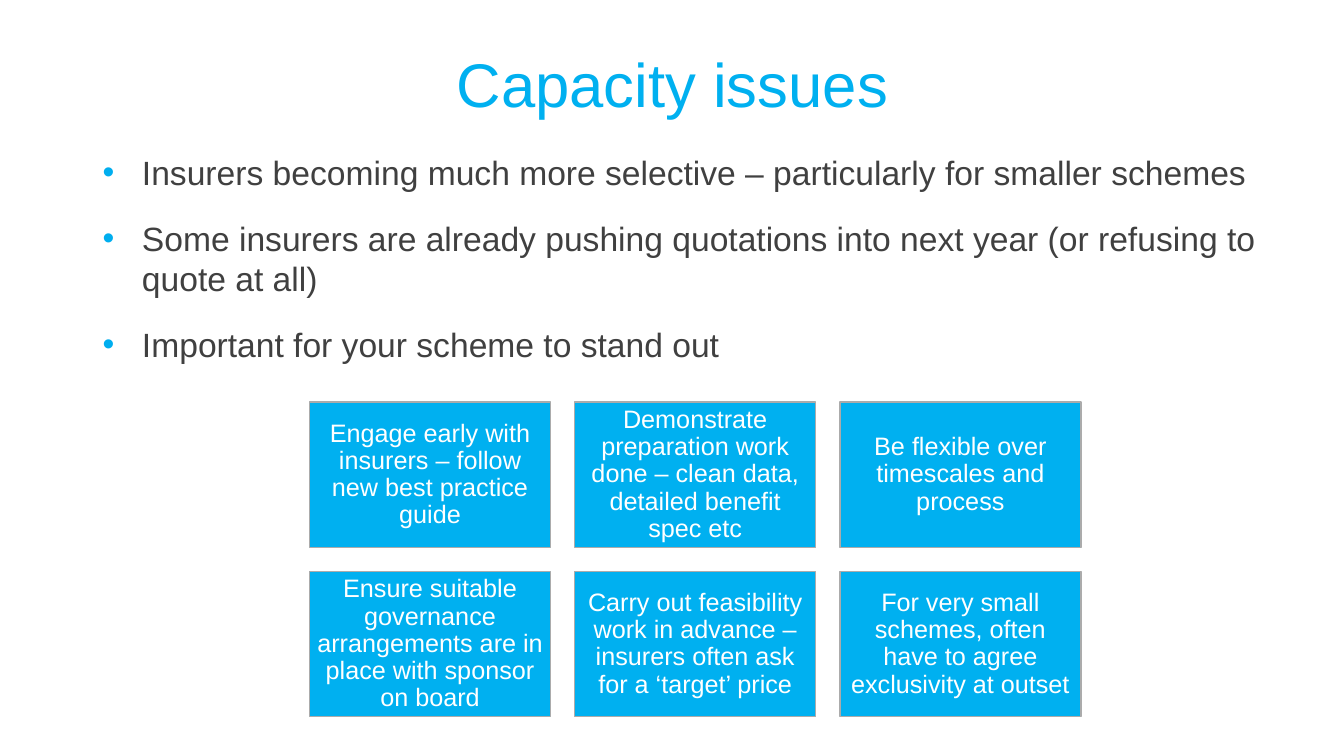
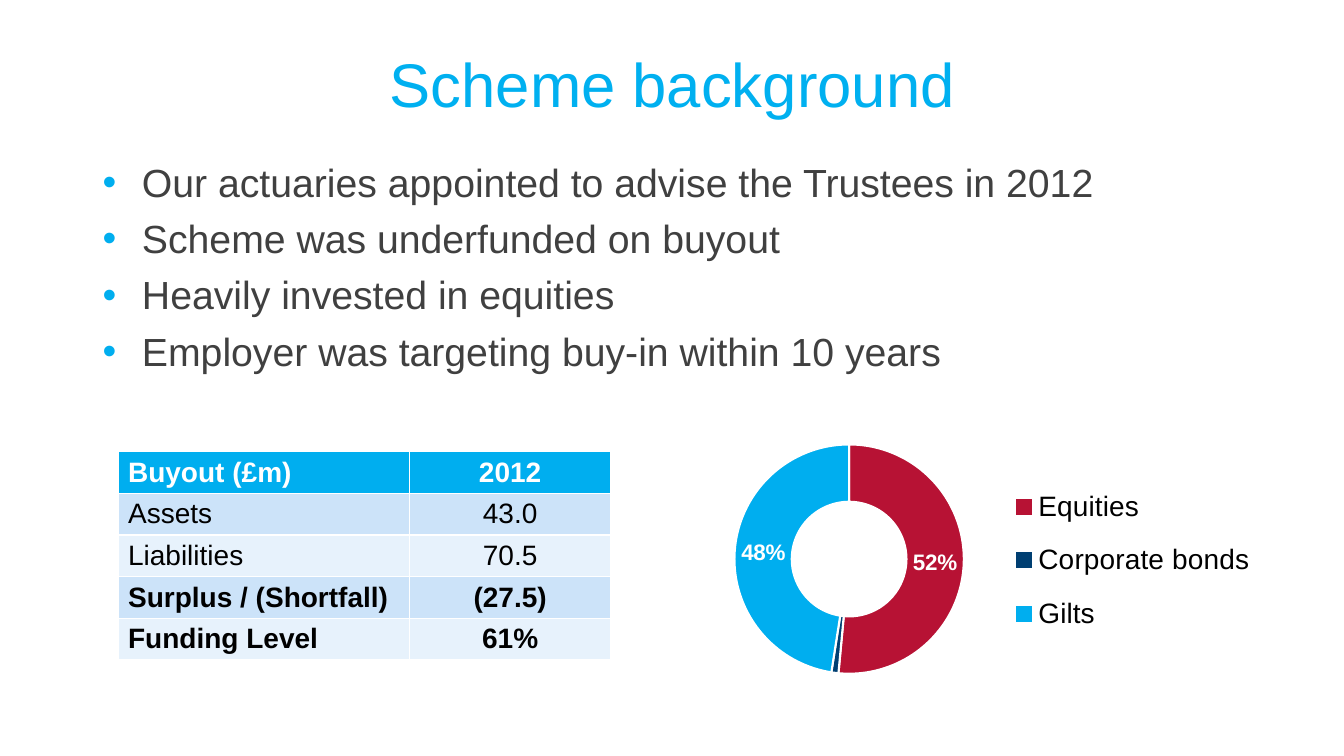
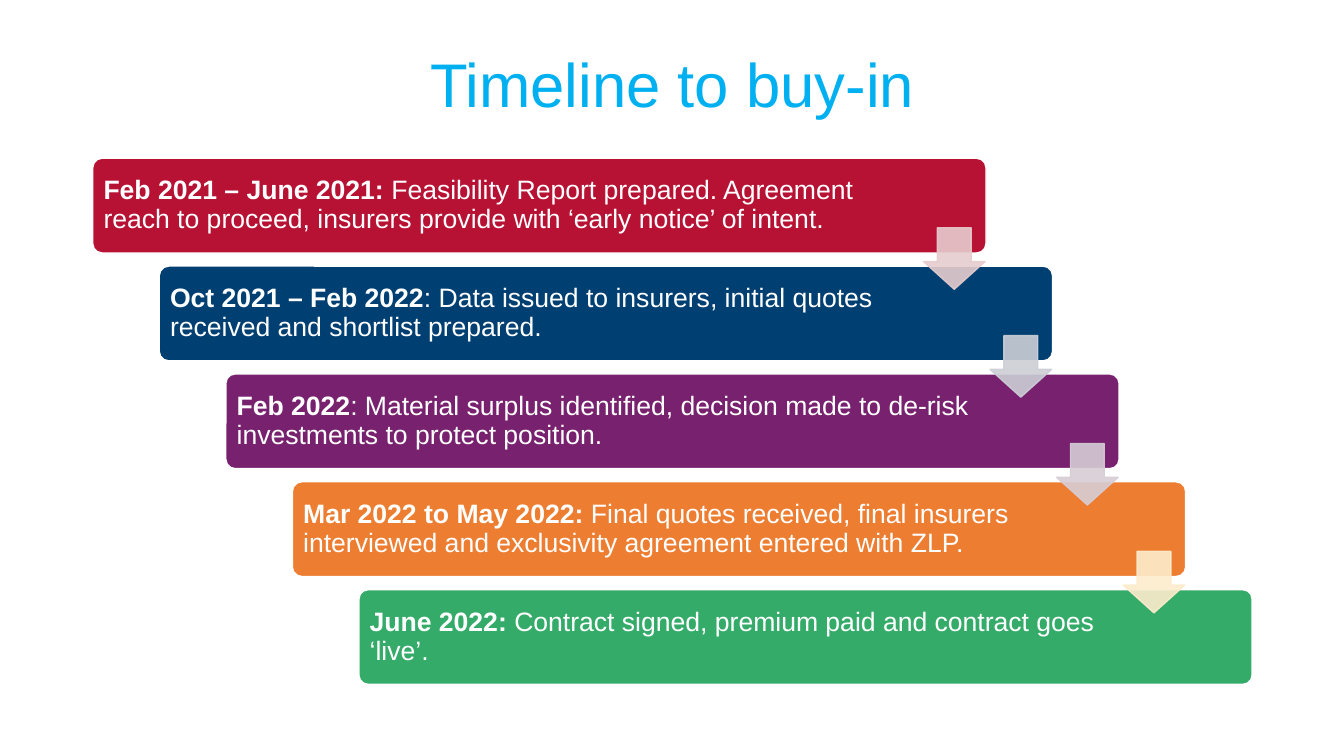
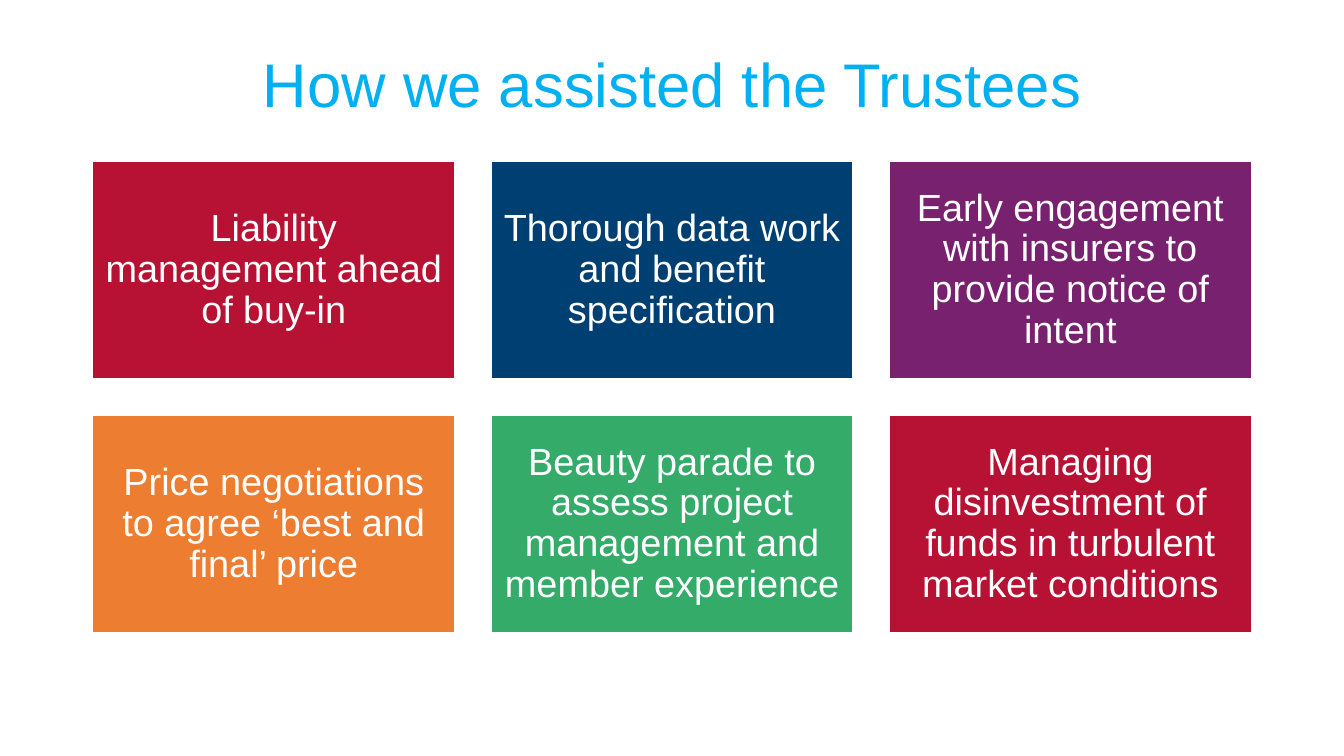
from lxml.etree import SubElement
from pptx import Presentation
from pptx.chart.data import CategoryChartData
from pptx.dml.color import RGBColor
from pptx.enum.chart import XL_CHART_TYPE, XL_LEGEND_POSITION
from pptx.enum.shapes import MSO_SHAPE as SHAPE
from pptx.enum.text import MSO_ANCHOR as ANCHOR, PP_ALIGN as ALIGN
from pptx.oxml import parse_xml
from pptx.oxml.ns import nsdecls, qn
from pptx.util import Inches, Pt

FONT = "Arial"
COLORS = {
    "title": "00B0F0", "text": "404040", "white": "FFFFFF", "black": "000000",
    "cyan": "00AEEF", "red": "B71234", "navy": "003F72", "purple": "77216F",
    "orange": "ED7D31", "green": "35AB6A", "grey": "ABABAB",
    "band_dark": "CCE3F9", "band_light": "E7F2FC",
    "pale_red": "E6CCCE", "pale_navy": "CCCFD5",
    "pale_purple": "D6CDD5", "pale_orange": "FDECCC",
}
LEFT, WIDTH = 0.92, 11.5

TIPS = [
    "Engage early with insurers – follow new best practice guide",
    "Demonstrate preparation work done – clean data, detailed benefit spec etc",
    "Be flexible over timescales and process",
    "Ensure suitable governance arrangements are in place with sponsor on board",
    "Carry out feasibility work in advance – insurers often ask for a ‘target’ price",
    "For very small schemes, often have to agree exclusivity at outset",
]
FUNDING = [
    ("Buyout (£m)", "2012"),
    ("Assets", "43.0"),
    ("Liabilities", "70.5"),
    ("Surplus / (Shortfall)", "(27.5)"),
    ("Funding Level", "61%"),
]
ALLOCATION = [
    ("Equities", 0.52, "red"),
    ("Corporate bonds", 0.01, "navy"),
    ("Gilts", 0.48, "cyan"),
]
STAGES = [
    ("Feb 2021 – June 2021: ", "Feasibility Report prepared. Agreement reach to "
     "proceed, insurers provide with ‘early notice’ of intent.", "red"),
    ("Oct 2021 – Feb 2022", ": Data issued to insurers, initial quotes received "
     "and shortlist prepared.", "navy"),
    ("Feb 2022", ": Material surplus identified, decision made to de-risk "
     "investments to protect position.", "purple"),
    ("Mar 2022 to May 2022: ", "Final quotes received, final insurers interviewed "
     "and exclusivity agreement entered with ZLP.", "orange"),
    ("June 2022: ", "Contract signed, premium paid and contract goes ‘live’.", "green"),
]
SERVICES = [
    ("Liability management ahead of buy-in", "red"),
    ("Thorough data work and benefit specification", "navy"),
    ("Early engagement with insurers to provide notice of intent", "purple"),
    ("Price negotiations to agree ‘best and final’ price", "orange"),
    ("Beauty parade to assess project management and member experience", "green"),
    ("Managing disinvestment of funds in turbulent market conditions", "red"),
]


def rgb(name):
    return RGBColor.from_string(COLORS[name])


def set_all(obj, **values):
    for name, value in values.items():
        setattr(obj, name, value)


def style_font(font, size, color, bold=False):
    set_all(font, name=FONT, size=Pt(size), bold=bold)
    font.color.rgb = rgb(color)


def write(p, text, size, color, bold=False):
    r = p.add_run()
    r.text = text
    style_font(r.font, size, color, bold)


def add_slide(prs, title):
    slide = prs.slides.add_slide(prs.slide_layouts[5])
    sp = slide.shapes.title
    set_all(sp, left=Inches(LEFT), top=Inches(0.28),
            width=Inches(WIDTH), height=Inches(1.18))
    tf = sp.text_frame
    set_all(tf, vertical_anchor=ANCHOR.MIDDLE, word_wrap=True)
    p = tf.paragraphs[0]
    set_all(p, alignment=ALIGN.CENTER, line_spacing=0.9)
    write(p, title, 44, "title")
    return slide


def add_bullets(slide, items, top, width, height, size, before, spacing):
    sp = slide.shapes.add_textbox(Inches(LEFT), Inches(top), Inches(width), Inches(height))
    tf = sp.text_frame
    tf.word_wrap = True
    for i, item in enumerate(items):
        p = tf.add_paragraph() if i else tf.paragraphs[0]
        pPr = p._p.get_or_add_pPr()
        pPr.set("marL", str(Inches(0.39)))
        pPr.set("indent", str(-Inches(0.39)))
        SubElement(SubElement(pPr, qn("a:buClr")), qn("a:srgbClr")).set("val", COLORS["cyan"])
        SubElement(pPr, qn("a:buFont")).set("typeface", FONT)
        SubElement(pPr, qn("a:buChar")).set("char", "•")
        set_all(p, line_spacing=spacing, space_before=Pt(before if i else 0))
        write(p, item, size, "text")


def add_box(slide, kind, at, fill, line="white", margin=0.08):
    sp = slide.shapes.add_shape(kind, *map(Inches, at))
    sp.shadow.inherit = False
    sp.fill.solid()
    sp.fill.fore_color.rgb = rgb(fill)
    sp.line.color.rgb = rgb(line)
    sp.line.width = Pt(1)
    sides = ("margin_left", "margin_top", "margin_right", "margin_bottom")
    set_all(sp.text_frame, word_wrap=True, vertical_anchor=ANCHOR.MIDDLE,
            **dict.fromkeys(sides, Inches(margin)))
    return sp


def add_card_grid(slide, cards, origin, card, gap, size, line, margin):
    """Lay out (text, fill) cards in rows of three."""
    for i, (text, fill) in enumerate(cards):
        row, col = divmod(i, 3)
        at = (origin[0] + col * (card[0] + gap), origin[1] + row * (card[1] + gap), *card)
        sp = add_box(slide, SHAPE.RECTANGLE, at, fill, line, margin)
        p = sp.text_frame.paragraphs[0]
        set_all(p, alignment=ALIGN.CENTER, line_spacing=0.9)
        write(p, text, size, "white")


def add_funding_table(slide):
    at = map(Inches, (1.17, 4.48, 4.89, 2.05))
    table = slide.shapes.add_table(len(FUNDING), 2, *at).table
    for column, width in zip(table.columns, (2.89, 2)):
        column.width = Inches(width)
    for i, values in enumerate(FUNDING):
        table.rows[i].height = Inches(0.41)
        fill = "cyan" if i == 0 else "band_dark" if i % 2 else "band_light"
        for j, value in enumerate(values):
            cell = table.cell(i, j)
            set_all(cell, vertical_anchor=ANCHOR.MIDDLE,
                    margin_top=Inches(0.04), margin_bottom=Inches(0.04))
            cell.fill.solid()
            cell.fill.fore_color.rgb = rgb(fill)
            p = cell.text_frame.paragraphs[0]
            p.alignment = ALIGN.CENTER if j else ALIGN.LEFT
            write(p, value, 20, "black" if i else "white", bold=i in (0, 3, 4))


def set_layout(element, index, box, inner=False):
    """Place a chart part by fractions of the chart area."""
    for old in element.findall(qn("c:layout")):
        element.remove(old)
    target = '<c:layoutTarget val="inner"/>' if inner else ""
    modes = '<c:xMode val="edge"/><c:yMode val="edge"/>'
    sizes = "".join(f'<c:{k} val="{v}"/>' for k, v in zip("xywh", box))
    element.insert(index, parse_xml(
        f'<c:layout {nsdecls("c")}><c:manualLayout>{target}{modes}{sizes}'
        "</c:manualLayout></c:layout>"))


def add_allocation_chart(slide):
    names, values, fills = zip(*ALLOCATION)
    data = CategoryChartData(number_format="0%")
    data.categories = names
    data.add_series("Series 1", values)
    at = map(Inches, (6.67, 4.27, 5.85, 2.58))
    chart = slide.shapes.add_chart(XL_CHART_TYPE.DOUGHNUT, *at, data).chart
    set_all(chart, has_title=False, has_legend=True)
    style_font(chart.font, 16, "black")
    set_all(chart.legend, position=XL_LEGEND_POSITION.RIGHT, include_in_layout=False)
    style_font(chart.legend.font, 20, "black")

    plot = chart.plots[0]
    plot.vary_by_categories = True
    series = plot.series[0]
    for i, fill in enumerate(fills):
        form = series.points[i].format
        form.fill.solid()
        form.fill.fore_color.rgb = rgb(fill)
        form.line.color.rgb = rgb("white")
        form.line.width = Pt(1.5)
    labels = series.data_labels
    set_all(labels, show_value=True, show_percentage=False, show_legend_key=False,
            number_format="0%", number_format_is_linked=False)
    style_font(labels.font, 16, "white", bold=True)
    labels._element.insert(0, parse_xml(
        f'<c:dLbl {nsdecls("c")}><c:idx val="1"/><c:delete val="1"/></c:dLbl>'))

    plot_area = chart._chartSpace.chart.plotArea
    set_layout(plot_area, 0, (0.105, 0.054, 0.389, 0.882), inner=True)
    set_layout(chart.legend._element, 1, (0.57, 0.15, 0.42, 0.7))


def add_stage(slide, index, when, what, fill):
    at = (LEFT + 0.66 * index, 1.57 + 1.07 * index, 8.86, 0.94)
    sp = add_box(slide, SHAPE.ROUNDED_RECTANGLE, at, fill)
    sp.adjustments[0] = 0.1
    sp.text_frame.margin_right = Inches(1.15)
    p = sp.text_frame.paragraphs[0]
    set_all(p, alignment=ALIGN.LEFT, line_spacing=0.9)
    write(p, when, 19, "white", bold=True)
    write(p, what, 19, "white")


def add_stage_arrow(slide, index, fill):
    at = (9.16 + 0.66 * index, 2.26 + 1.07 * index, 0.61, 0.61)
    sp = add_box(slide, SHAPE.DOWN_ARROW, at, fill, fill)
    sp.adjustments[0], sp.adjustments[1] = 0.55, 0.45
    for color in sp._element.spPr.iter(qn("a:srgbClr")):
        SubElement(color, qn("a:alpha")).set("val", "90000")


def main():
    prs = Presentation()
    prs.slide_width, prs.slide_height = Inches(13.33), Inches(7.5)

    slide = add_slide(prs, "Capacity issues")
    add_bullets(slide, [
        "Insurers becoming much more selective – particularly for smaller schemes",
        "Some insurers are already pushing quotations into next year "
        "(or refusing to quote at all)",
        "Important for your scheme to stand out",
    ], top=1.46, width=11.84, height=4.84, size=24, before=18, spacing=1.0)
    add_card_grid(slide, [(tip, "title") for tip in TIPS], (3.07, 3.99), (2.39, 1.44),
                  gap=0.24, size=18, line="grey", margin=0.07)

    slide = add_slide(prs, "Scheme background")
    add_bullets(slide, [
        "Our actuaries appointed to advise the Trustees in 2012",
        "Scheme was underfunded on buyout",
        "Heavily invested in equities",
        "Employer was targeting buy-in within 10 years",
    ], top=1.57, width=WIDTH, height=4.72, size=28, before=10, spacing=0.9)
    add_allocation_chart(slide)
    add_funding_table(slide)

    slide = add_slide(prs, "Timeline to buy-in")
    for i, stage in enumerate(STAGES):
        add_stage(slide, i, *stage)
    for i, (_, _, fill) in enumerate(STAGES[:-1]):
        add_stage_arrow(slide, i, "pale_" + fill)

    slide = add_slide(prs, "How we assisted the Trustees")
    add_card_grid(slide, SERVICES, (LEFT, 1.6), (3.59, 2.16),
                  gap=0.36, size=27, line="white", margin=0.11)

    prs.save("out.pptx")


if __name__ == "__main__":
    main()
